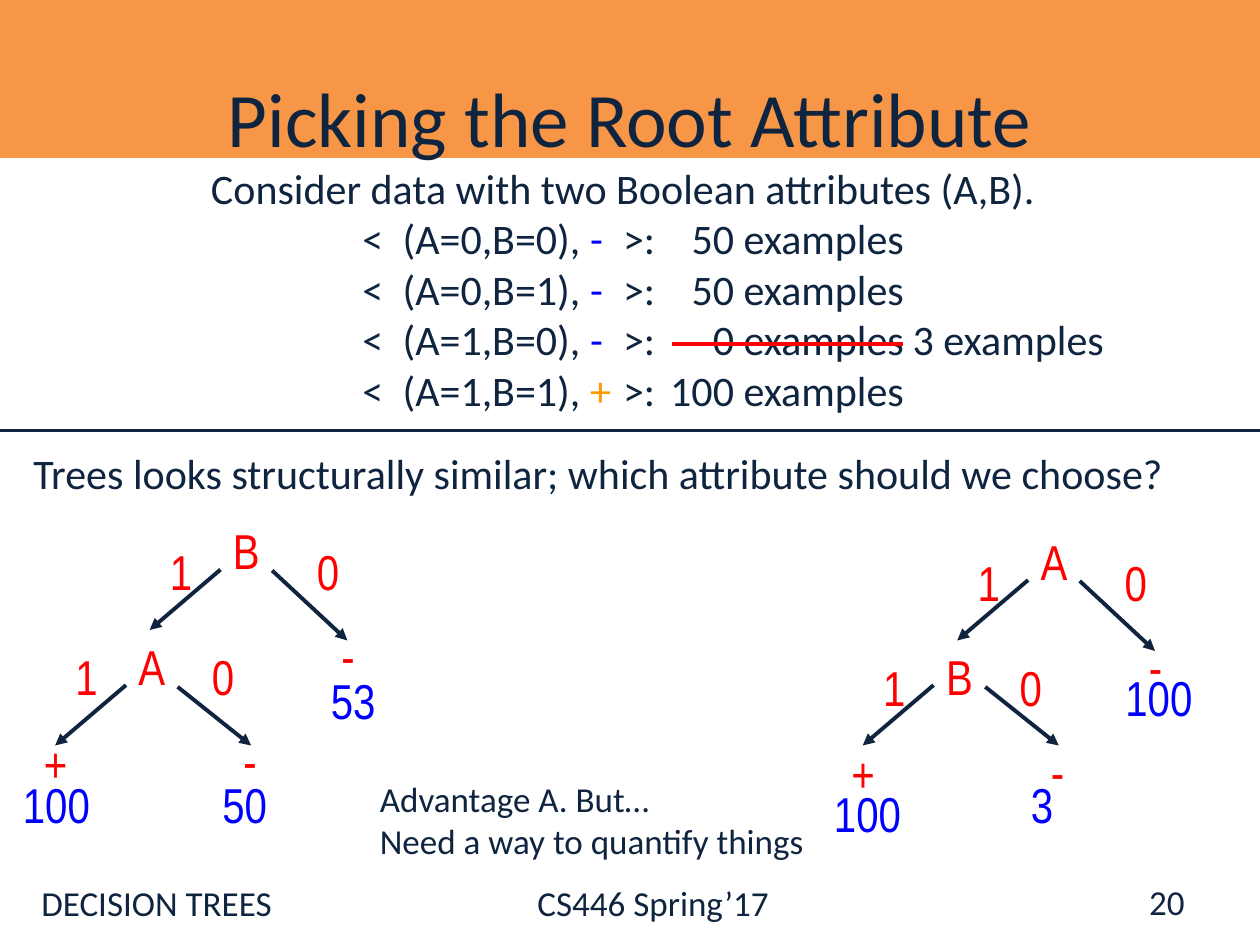
"""Build the slide on picking the root attribute of a decision tree."""
from lxml import etree
from pptx import Presentation
from pptx.dml.color import RGBColor
from pptx.enum import shapes, text
from pptx.oxml.ns import qn
from pptx.util import Pt

COLORS = {"ink": "0F243E", "band": "F79646", "red": "FF0000",
          "blue": "0000FF", "plus": "FF9900"}
WIDTHS = {"A": 29.5, "B": 29.5, "0": 27, "1": 27, "3": 27, "+": 28,
          "-": 22.5, "50": 40, "53": 40, "100": 52.5}


def add_text(left, top, width, height, lines, size=20, color="ink", font="Calibri", stops=(), wrap=False):
    """Add a text box; each line is a list of (words, color) or a plain string."""
    box = page.shapes.add_textbox(Pt(left), Pt(top), Pt(width), Pt(height))
    frame = box.text_frame
    frame.word_wrap = wrap
    for number, line in enumerate(lines):
        para = frame.paragraphs[0] if number == 0 else frame.add_paragraph()
        if stops:
            tabs = etree.SubElement(para._p.get_or_add_pPr(), qn("a:tabLst"))
            for position, align in stops:
                etree.SubElement(tabs, qn("a:tab"), pos=str(Pt(position)), algn=align)
        for words, tone in [(line, color)] if isinstance(line, str) else line:
            span = para.add_run()
            span.text = words
            span.font.size = Pt(size)
            span.font.name = font
            span.font.color.rgb = RGBColor.from_string(COLORS[tone])
    return box


def add_line(x1, y1, x2, y2, color="ink", arrow=False):
    """Add a straight line, with an arrowhead at its end if wanted."""
    line = page.shapes.add_connector(shapes.MSO_CONNECTOR.STRAIGHT, Pt(x1), Pt(y1), Pt(x2), Pt(y2))
    line.line.color.rgb = RGBColor.from_string(COLORS[color])
    line.line.width = Pt(2.25)
    if arrow:
        etree.SubElement(line.line._get_or_add_ln(), qn("a:tailEnd"), type="triangle")
    etree.SubElement(line._element.spPr, qn("a:effectLst"))


deck = Presentation()
deck.slide_width, deck.slide_height = Pt(720), Pt(540)
page = deck.slides.add_slide(deck.slide_layouts[5])

band = page.shapes.add_shape(shapes.MSO_SHAPE.RECTANGLE, 0, 0, Pt(720), Pt(90))
band.shadow.inherit = False
band.fill.solid()
band.fill.fore_color.rgb = RGBColor.from_string(COLORS["band"])
band.line.color.rgb = RGBColor.from_string(COLORS["band"])
band.line.width = Pt(0.75)
page.shapes._spTree.insert(2, band._element)

title = page.shapes.title
title.left, title.top, title.width, title.height = Pt(36), Pt(21.6), Pt(648), Pt(90)
title.text_frame.text = "Picking the Root Attribute"
title.text_frame.vertical_anchor = text.MSO_ANCHOR.MIDDLE
heading = title.text_frame.paragraphs[0]
heading.alignment = text.PP_ALIGN.CENTER
heading_font = heading.runs[0].font
heading_font.size = Pt(44)
heading_font.name = "Calibri"
heading_font.color.rgb = RGBColor.from_string(COLORS["ink"])

examples = [("(A=0,B=0)", "-", "blue", "50 examples"),
            ("(A=0,B=1)", "-", "blue", "50 examples"),
            ("(A=1,B=0)", "-", "blue", "0 examples\t3 examples"),
            ("(A=1,B=1)", "+", "plus", "100 examples")]
rows = [[(f"\t<\t{values}, ", "ink"), (sign, tone), (f"\t>:\t{count}", "ink")]
        for values, sign, tone, count in examples]
body = add_text(108, 89.3, 612, 152.6, ["Consider data with two Boolean attributes (A,B).", *rows], 24,
                stops=[(92, "l"), (115, "l"), (241, "l"), (401.5, "r"), (406.5, "l")], wrap=True)
body.text_frame.paragraphs[0]._p.pPr.set("marL", str(Pt(5.5)))
add_line(0, 246, 720, 246)
add_line(384, 196.5, 516, 196.5, "red")

add_text(12, 252, 666, 36, ["Trees looks structurally similar; which attribute should we choose?"], 24)

labels = [("1", 90, 306), ("0", 174, 306), ("-", 188, 354), ("1", 36, 366),
          ("0", 114, 366), ("+", 18, 415.5), ("-", 132, 414)]
upper_arrows = [(126, 325.5, 85.5, 360), (155.5, 326, 198.5, 366)]
lower_arrows = [(72, 391.5, 31.5, 426), (101.5, 392.5, 143.5, 426)]
trees = [("B", "A", 0, 0, [("53", 182, 379.5), ("50", 120, 439), ("100", 6, 439)]),
         ("A", "B", 461.5, 6, [("100", 636, 378), ("3", 582, 439), ("100", 469.5, 444)])]
for root, child, dx, dy, counts in trees:
    for word, x, y in [(root, 126, 294), (child, 72, 360), *labels]:
        add_text(x + dx, y + dy, WIDTHS[word], 41, [word], 28, "red", "Arial Narrow")
    for arrows, drop in ((upper_arrows, dy), (lower_arrows, 0)):
        for x1, y1, x2, y2 in arrows:
            add_line(x1 + dx, y1 + drop, x2 + dx, y2 + drop, arrow=True)
    for word, x, y in counts:
        add_text(x, y, WIDTHS[word], 41, [word], 28, "blue", "Arial Narrow")

add_text(210, 440.5, 259, 55.5, ["Advantage A. But…", "Need a way to quantify things"])

add_text(16.5, 500, 500, 40, ["DECISION TREES\tCS446 Spring’17"], stops=[(283.5, "l")], wrap=True)
page_number = add_text(516, 500.5, 168, 29, ["20"], wrap=True)
page_number.text_frame.vertical_anchor = text.MSO_ANCHOR.MIDDLE
page_number.text_frame.paragraphs[0].alignment = text.PP_ALIGN.RIGHT

deck.save("out.pptx")
